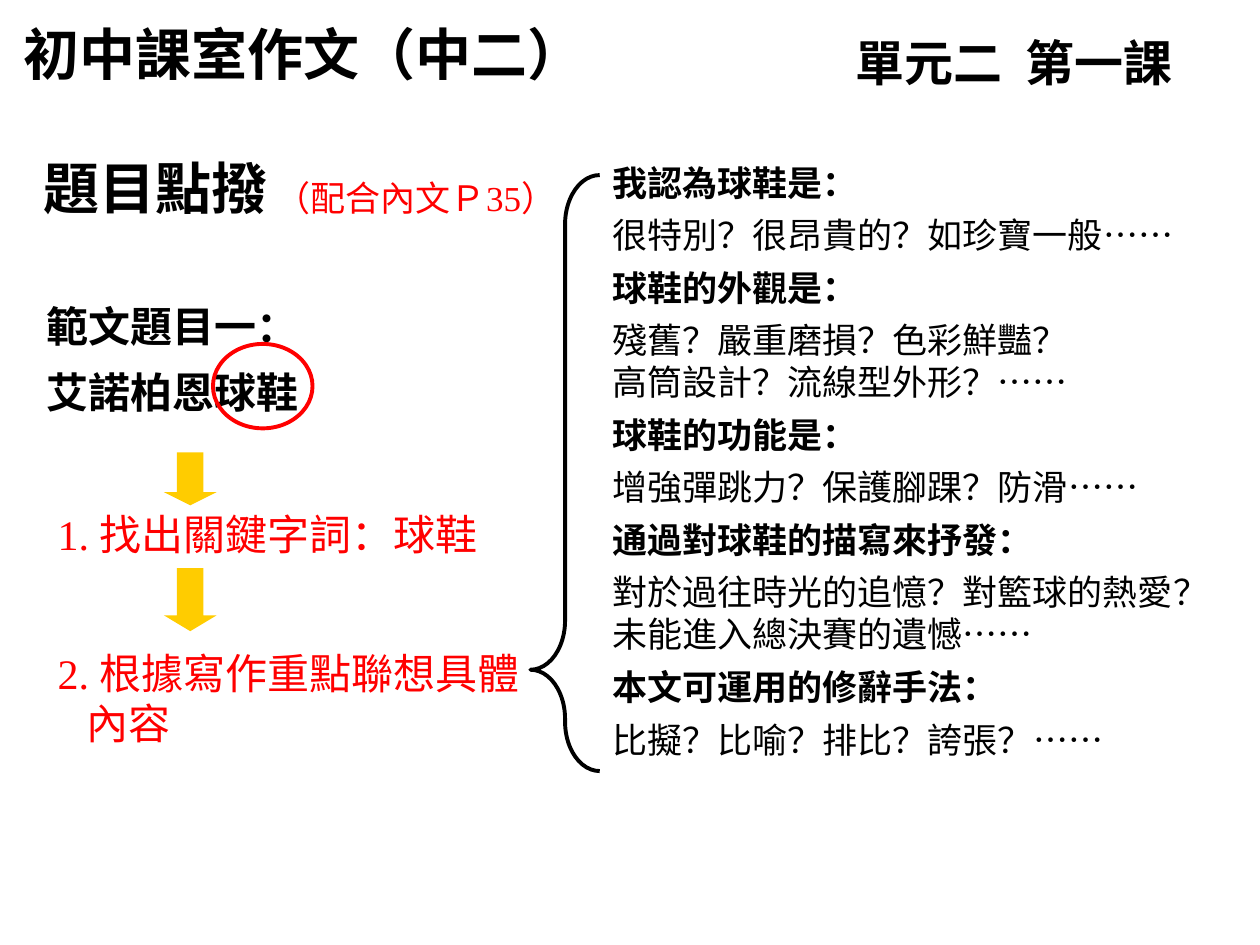
"""Build the Chinese writing lesson slide on the sneakers essay."""
from lxml import etree
from pptx import Presentation, util as u
from pptx.dml.color import RGBColor
from pptx.enum import shapes, text
from pptx.oxml.ns import qn

BLACK, RED, GOLD = "000000", "FF0000", "FFCC00"
SANS, SERIF, CJK = "DejaVu Sans", "Times New Roman", "Noto Sans CJK SC"
LABELS = [
    ((0.27, 2.22, 5, 1.14), ["範文題目一：", "艾諾柏恩球鞋"], SANS, 24, BLACK, True, 1.3),
    ((0.09, 0.11, 5.22, 0.63), ["初中課室作文（中二）"], "Lato", 32, BLACK, True, 1),
    ((0.25, 1.17, 3.08, 0.63), ["題目點撥"], "Arial", 32, BLACK, True, 1),
    ((6.69, 0.21, 3.35, 0.57), ["單元二  第一課"], "Lato", 28, BLACK, True, 1),
    ((2.09, 1.35, 2.47, 0.43), ["（配合內文Ｐ35）"], SERIF, 20, RED, False, 1),
]
STEPS = [
    ((0.36, 3.99, 4.08, 0.5), "1. ", ["找出關鍵字詞：球鞋"]),
    ((0.36, 5.09, 4.17, 0.9), "2. ", ["根據寫作重點聯想具體", "內容"]),
]
IDEAS = [
    ("我認為球鞋是：", "很特別？很昂貴的？如珍寶一般", SANS),
    ("球鞋的外觀是：", "殘舊？嚴重磨損？色彩鮮豔？\n高筒設計？流線型外形？", SANS),
    ("球鞋的功能是：", "增強彈跳力？保護腳踝？防滑", SANS),
    ("通過對球鞋的描寫來抒發：", "對於過往時光的追憶？對籃球的熱愛？未能進入總決賽的遺憾", "Arial"),
    ("本文可運用的修辭手法：", "比擬？比喻？排比？誇張？", "Arial"),
]
DOWN, OVAL, BRACE = (shapes.MSO_SHAPE.DOWN_ARROW, shapes.MSO_SHAPE.OVAL,
                     shapes.MSO_SHAPE.LEFT_BRACE)
SHAPES = [
    (DOWN, (1.3, 3.59, 0.42, 0.42), (0.5, 0.25), GOLD, None),
    (DOWN, (1.3, 4.51, 0.42, 0.5), (0.5, 0.3), GOLD, None),
    (OVAL, (1.69, 2.73, 0.79, 0.67), (), None, RED),
    (BRACE, (4.21, 1.39, 0.55, 4.73), (0.71, 0.83), None, BLACK),
]


def rgb(value):
    return RGBColor.from_string(value)


def east_asian(props, name):
    face = SANS if name == SERIF else name
    props.find(qn("a:latin")).addnext(etree.Element(qn("a:ea"), typeface=face))


def style(p, name, size, color, bold=False):
    p.font.name, p.font.size, p.font.bold = name, u.Pt(size), bold
    p.font.color.rgb = rgb(color)
    east_asian(p._p.pPr.find(qn("a:defRPr")), name)


def add_run(p, content, name):
    r = p.add_run()
    r.text, r.font.name = content, name
    east_asian(r._r.rPr, name)


def add_box(s, at):
    tf = s.shapes.add_textbox(*map(u.Inches, at)).text_frame
    tf.word_wrap = True
    tf.auto_size = text.MSO_AUTO_SIZE.SHAPE_TO_FIT_TEXT
    return tf


def next_paragraph(tf, first):
    return tf.paragraphs[0] if first else tf.add_paragraph()


def add_label(s, at, lines, name, size, color, bold, spacing):
    tf = add_box(s, at)
    for i, line in enumerate(lines):
        p = next_paragraph(tf, i == 0)
        p.text, p.line_spacing = line, spacing
        style(p, name, size, color, bold)


def add_step(s, at, number, lines):
    tf = add_box(s, at)
    for i, line in enumerate(lines):
        p = next_paragraph(tf, i == 0)
        if i == 0:
            add_run(p, number, SERIF)
        else:
            p._p.get_or_add_pPr().set("marL", str(u.Inches(0.23)))
        add_run(p, line, SANS)
        style(p, SANS, 24, RED)


def add_ideas(s, at):
    tf = add_box(s, at)
    for i, (heading, prompts, name) in enumerate(IDEAS):
        p = next_paragraph(tf, i == 0)
        p.text = heading
        if i:
            p.space_before = u.Pt(6)
        style(p, SANS, 20, BLACK, True)
        p = tf.add_paragraph()
        p.space_before = u.Pt(6)
        for j, line in enumerate(prompts.split("\n")):
            if j:
                p.add_line_break()
            add_run(p, line, name)
        add_run(p, "……", CJK)
        style(p, name, 20, BLACK)


def add_figure(s, kind, at, adjustments, fill, line):
    sp = s.shapes.add_shape(kind, *map(u.Inches, at))
    sp.shadow.inherit = False
    for i, value in enumerate(adjustments):
        sp.adjustments[i] = value
    if fill:
        sp.fill.solid()
        sp.fill.fore_color.rgb = rgb(fill)
    else:
        sp.fill.background()
    if line:
        sp.line.color.rgb = rgb(line)
        sp.line.width = u.Pt(2.25)
    else:
        sp.line.fill.background()


def main():
    prs = Presentation()
    prs.slide_width, prs.slide_height = u.Inches(10), u.Inches(7.5)
    s = prs.slides.add_slide(prs.slide_layouts[6])
    for label in LABELS:
        add_label(s, *label)
    for step in STEPS:
        add_step(s, *step)
    for figure in SHAPES:
        add_figure(s, *figure)
    add_ideas(s, (4.76, 1.23, 4.72, 5.01))
    prs.save("out.pptx")


if __name__ == "__main__":
    main()
